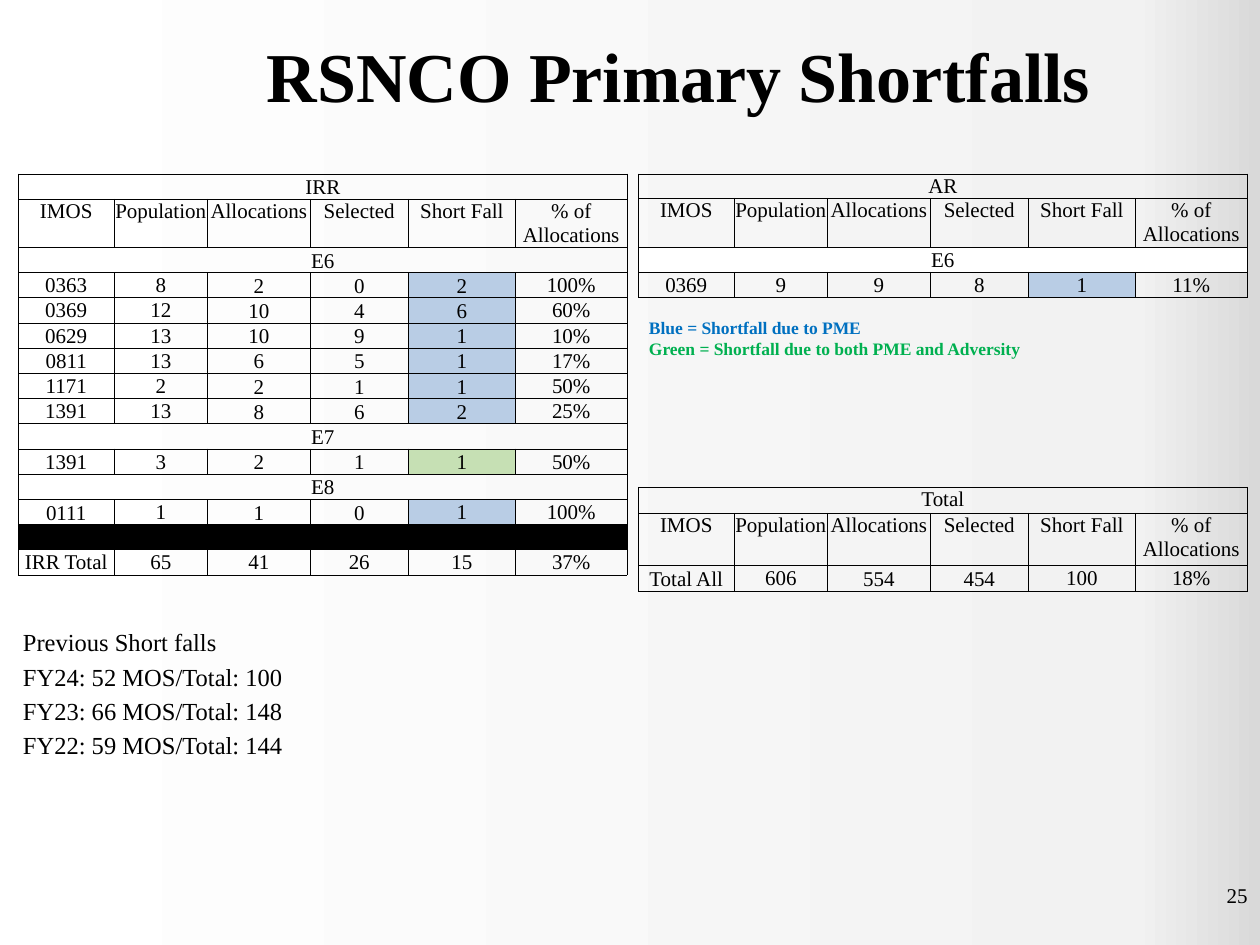
from dataclasses import dataclass

from lxml import etree
from pptx import Presentation
from pptx import util as u
from pptx.dml.color import RGBColor
from pptx.enum import text
from pptx.oxml import ns

COLORS = {
    "ink": "000000", "white": "FFFFFF", "pale": "F2F2F2", "gray": "D9D9D9",
    "pme": "B9CDE5", "both": "C6E0B4", "pme_note": "0070C0", "both_note": "00B050",
}
FONT = "Times New Roman"
TABLE_SIZE = 12
BORDER_WIDTH = 0.5
COLUMN_WIDTHS = [54.5, 53.6, 58.6, 56.1, 61.2, 63.8]
HEADINGS = ["IMOS", "Population", "Allocations", "Selected", "Short Fall", "% of Allocations"]
SHORTFALL_COLUMN = HEADINGS.index("Short Fall")
CELL_MARGINS = {"margin_left": 0.4, "margin_right": 0.4, "margin_top": 0.5, "margin_bottom": 0}
ANCHORS = {"t": text.MSO_ANCHOR.TOP, "m": text.MSO_ANCHOR.MIDDLE, "b": text.MSO_ANCHOR.BOTTOM}
LEFT, CENTER, RIGHT = text.PP_ALIGN.LEFT, text.PP_ALIGN.CENTER, text.PP_ALIGN.RIGHT


@dataclass
class Row:
    values: list[str]          # a single value spans the whole row
    anchors: str = "mmbbbm"    # one letter per column
    height: float = 14.4
    shortfall_fill: str = ""
    row_fill: str = ""


@dataclass
class Grid:
    left: float
    top: float
    rows: list[Row]


@dataclass
class Line:
    wording: str
    color: str = "ink"


@dataclass
class Note:
    left: float
    top: float
    width: float
    height: float
    lines: list[Line]
    size: float
    bold: bool = False
    align: text.PP_ALIGN = LEFT
    anchor: str = "t"
    gap: float = 0


def banner(title: str, anchor: str = "b", **options) -> Row:
    return Row([title], anchor * 6, **options)


def headings(height: float) -> Row:
    return Row(HEADINGS, "tttttt", height)


def record(line: str, fill: str = "", anchors: str = "mmbbbm", **options) -> Row:
    return Row(line.split("|"), anchors, shortfall_fill=fill, **options)


GRIDS = [
    Grid(364.9, 99.4, [
        banner("AR", "t", height=13.7),
        headings(28),
        banner("E6", row_fill="white"),
        record("0369|9|9|8|1|11%", "pme", "bmbbmm"),
    ]),
    Grid(10.6, 99.4, [
        banner("IRR"),
        headings(27.6),
        banner("E6"),
        record("0363|8|2|0|2|100%", "pme"),
        record("0369|12|10|4|6|60%", "pme"),
        record("0629|13|10|9|1|10%", "pme"),
        record("0811|13|6|5|1|17%", "pme"),
        record("1171|2|2|1|1|50%", "pme"),
        record("1391|13|8|6|2|25%", "pme"),
        banner("E7"),
        record("1391|3|2|1|1|50%", "both", "mbbbbm"),
        banner("E8"),
        record("0111|1|1|0|1|100%", "pme", "bmbbmm"),
        Row([""] * 6, row_fill="ink"),
        record("IRR Total|65|41|26|15|37%", anchors="mmmmmm"),
    ]),
    Grid(364.9, 278.4, [
        banner("Total", "t", height=14.9),
        headings(29.7),
        record("Total All|606|554|454|100|18%", anchors="bmbbmm", height=14.9),
    ]),
]

NOTES = [
    Note(65.5, 12.7, 654.5, 59.8, [Line("RSNCO Primary Shortfalls ")], 40, True, CENTER, "m"),
    Note(552.2, 500.8, 167.8, 28.8, [Line("25")], 12, align=RIGHT),
    Note(6, 355, 174.2, 85.7, [
        Line("Previous Short falls"),
        Line("FY24: 52 MOS/Total: 100"),
        Line("FY23: 66 MOS/Total: 148"),
        Line("FY22: 59 MOS/Total: 144"),
    ], 14, gap=2.8),
    Note(363.8, 177.8, 276.5, 31.7, [
        Line("Blue = Shortfall due to PME", "pme_note"),
        Line("Green = Shortfall due to both PME and Adversity", "both_note"),
    ], 10, True),
]


def add_span(para, wording: str, size: float, color: str = "ink", bold: bool = False) -> None:
    span = para.add_run()
    span.text = wording
    for name, value in {"name": FONT, "size": u.Pt(size), "bold": bold}.items():
        setattr(span.font, name, value)
    span.font.color.rgb = RGBColor.from_string(COLORS[color])


def add_color(parent, color: str) -> None:
    etree.SubElement(parent, ns.qn("a:srgbClr"), val=COLORS[color])


def paint_background(page) -> None:
    fill = page.background.fill
    fill.gradient()
    fill.gradient_angle = 0
    stops = page.element.find(".//" + ns.qn("a:gsLst"))
    for stop in list(stops):
        stops.remove(stop)
    for percent, color in [(0, "white"), (90, "pale"), (100, "gray")]:
        add_color(etree.SubElement(stops, ns.qn("a:gs"), pos=str(percent * 1000)), color)


def add_borders(cell) -> None:
    properties = cell._tc.get_or_add_tcPr()
    for index, side in enumerate(["lnL", "lnR", "lnT", "lnB"]):
        border = etree.Element(ns.qn("a:" + side), w=str(u.Pt(BORDER_WIDTH)))
        add_color(etree.SubElement(border, ns.qn("a:solidFill")), "ink")
        properties.insert(index, border)


def format_cell(cell, anchor: str, fill: str) -> None:
    for name, value in CELL_MARGINS.items():
        setattr(cell, name, u.Pt(value))
    cell.vertical_anchor = ANCHORS[anchor]
    if fill:
        cell.fill.solid()
        cell.fill.fore_color.rgb = RGBColor.from_string(COLORS[fill])
    else:
        cell.fill.background()
    add_borders(cell)


def write_cell(cell, wording: str) -> None:
    para = cell.text_frame.paragraphs[0]
    para.alignment = CENTER
    if wording:
        add_span(para, wording, TABLE_SIZE)
    else:  # keeps an empty row as low as the others
        ending = etree.SubElement(para._p, ns.qn("a:endParaRPr"), sz=str(TABLE_SIZE * 100))
        etree.SubElement(ending, ns.qn("a:latin"), typeface=FONT)


def draw_grid(page, grid: Grid) -> None:
    height = sum(row.height for row in grid.rows)
    table = page.shapes.add_table(
        len(grid.rows), len(COLUMN_WIDTHS), u.Pt(grid.left), u.Pt(grid.top),
        u.Pt(sum(COLUMN_WIDTHS)), u.Pt(height)).table
    table.first_row = table.horz_banding = False
    for column, width in zip(table.columns, COLUMN_WIDTHS):
        column.width = u.Pt(width)
    for index, row in enumerate(grid.rows):
        table.rows[index].height = u.Pt(row.height)
        cells = list(table.rows[index].cells)
        for position, cell in enumerate(cells):
            shortfall = row.shortfall_fill if position == SHORTFALL_COLUMN else ""
            format_cell(cell, row.anchors[position], row.row_fill or shortfall)
        if len(row.values) == 1:
            cells[0].merge(cells[-1])
        for cell, value in zip(cells, row.values):
            write_cell(cell, value)


def draw_note(page, note: Note) -> None:
    box = page.shapes.add_textbox(*map(u.Pt, (note.left, note.top, note.width, note.height)))
    frame = box.text_frame
    frame.word_wrap = True
    frame.vertical_anchor = ANCHORS[note.anchor]
    for index, line in enumerate(note.lines):
        para = frame.add_paragraph() if index else frame.paragraphs[0]
        para.alignment = note.align
        para.space_before = u.Pt(note.gap if index else 0)
        add_span(para, line.wording, note.size, line.color, note.bold)


def main() -> None:
    deck = Presentation()
    deck.slide_width, deck.slide_height = u.Pt(720), u.Pt(540)
    page = deck.slides.add_slide(deck.slide_layouts[6])
    paint_background(page)
    # Shortfall tables
    for grid in GRIDS:
        draw_grid(page, grid)
    # Title, page number, history and colour key
    for note in NOTES:
        draw_note(page, note)
    deck.save("out.pptx")


if __name__ == "__main__":
    main()
